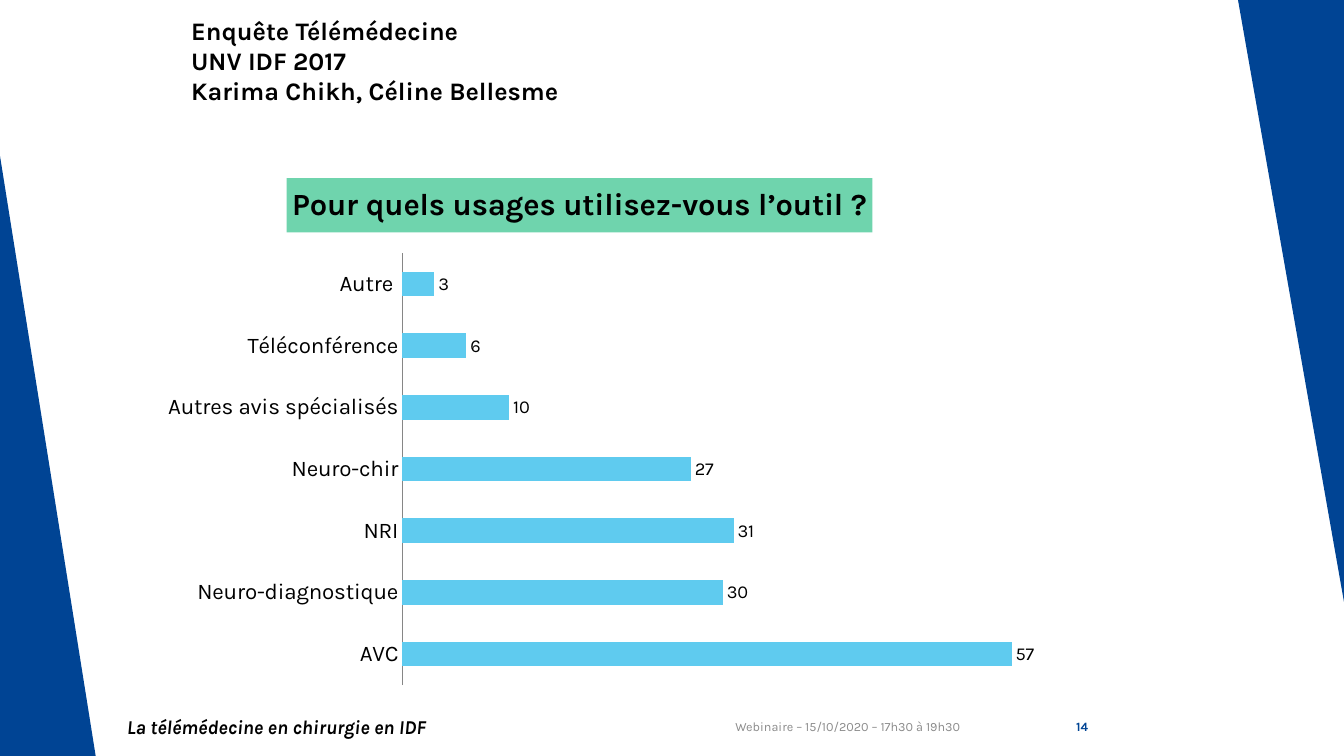
from lxml import etree
from pptx import Presentation, util as u
from pptx.chart.data import CategoryChartData
from pptx.dml.color import RGBColor
from pptx.enum import chart as charts, shapes, text
from pptx.oxml.ns import qn

COLORS = {"blue": "004494", "sky": "5FCBEF", "green": "6FD4AD",
          "black": "000000", "grey": "8C8C8C", "axis": "868686"}
USAGES = {"AVC": 57, "Neuro-diagnostique": 30, "NRI": 31, "Neuro-chir": 27,
          "Autres avis spécialisés": 10, "Téléconférence": 6, "Autre ": 3}


def px(length):
    return u.Inches(length / 100.8)


def color(name):
    return RGBColor.from_string(COLORS[name])


class SurveySlide:
    """Holds the deck style and the current slide, and draws its elements."""

    font_name = "Karla"

    def __init__(self):
        self.presentation = Presentation()
        self.presentation.slide_width = px(1344)
        self.presentation.slide_height = px(756)
        self.slide = self.presentation.slides.add_slide(self.presentation.slide_layouts[5])

    def style(self, font, size, shade="black", bold=False, italic=False):
        font.name = self.font_name
        font.size = u.Pt(size)
        font.bold = bold
        font.italic = italic
        font.color.rgb = color(shade)

    def fill_text(self, shape, lines, size, anchor, align, **look):
        frame = shape.text_frame
        frame.word_wrap = True
        frame.auto_size = text.MSO_AUTO_SIZE.NONE
        frame.vertical_anchor = anchor
        frame.text = "\n".join(lines)
        for paragraph in frame.paragraphs:
            paragraph.alignment = align
            self.style(paragraph.font, size, **look)

    def title(self, box, lines):
        shape = self.slide.shapes.title
        shape.left, shape.top, shape.width, shape.height = map(px, box)
        self.fill_text(shape, lines, 18, text.MSO_ANCHOR.TOP, text.PP_ALIGN.LEFT, bold=True)

    def label(self, box, line, size, align=text.PP_ALIGN.LEFT, **look):
        shape = self.slide.shapes.add_textbox(*map(px, box))
        self.fill_text(shape, [line], size, text.MSO_ANCHOR.MIDDLE, align, **look)

    def corner(self, box, rotation=0):
        shape = self.slide.shapes.add_shape(shapes.MSO_SHAPE.RIGHT_TRIANGLE, *map(px, box))
        shape.rotation = rotation
        shape.shadow.inherit = False
        shape.fill.solid()
        shape.fill.fore_color.rgb = color("blue")
        shape.line.fill.background()

    def place(self, element, index, **settings):
        for old in element.findall(qn("c:layout")):
            element.remove(old)
        layout = etree.Element(qn("c:layout"))
        manual = etree.SubElement(layout, qn("c:manualLayout"))
        for tag, value in settings.items():
            etree.SubElement(manual, qn(f"c:{tag}")).set("val", str(value))
        element.insert(index, layout)

    def bar_chart(self, box, heading, values):
        data = CategoryChartData()
        data.categories = list(values)
        data.add_series("Series 1", list(values.values()))
        chart = self.slide.shapes.add_chart(
            charts.XL_CHART_TYPE.BAR_CLUSTERED, *map(px, box), data).chart
        self.style(chart.font, 13)
        chart.has_legend = False

        chart.has_title = True
        title = chart.chart_title
        title.text_frame.text = heading
        self.style(title.text_frame.paragraphs[0].font, 22, bold=True)
        title.include_in_layout = False
        title.format.fill.solid()
        title.format.fill.fore_color.rgb = color("green")
        self.place(title.element, 1, xMode="edge", yMode="edge", x=0.15, y=0.01)
        self.place(chart.element.find(".//" + qn("c:plotArea")), 0, layoutTarget="inner",
                   xMode="edge", yMode="edge", x=0.277, y=0.154, w=0.704, h=0.829)

        plot = chart.plots[0]
        plot.gap_width = 150
        plot.overlap = -25
        plot.vary_by_categories = False
        series = plot.series[0]
        series.format.fill.solid()
        series.format.fill.fore_color.rgb = color("sky")
        plot.has_data_labels = True
        plot.data_labels.show_value = True
        plot.data_labels.position = charts.XL_LABEL_POSITION.OUTSIDE_END
        self.style(plot.data_labels.font, 13)

        axis = chart.category_axis
        axis.major_tick_mark = charts.XL_TICK_MARK.NONE
        axis.format.line.color.rgb = color("axis")
        axis.format.line.width = u.Pt(1)
        self.style(axis.tick_labels.font, 16)
        scale = chart.value_axis
        scale.minimum_scale, scale.maximum_scale = 0, 60
        scale.has_major_gridlines = False
        scale.visible = False


def main():
    survey = SurveySlide()
    survey.corner((0, 156, 96, 602))
    survey.corner((1238, 0, 106, 602), rotation=180)
    survey.label((708, 707, 262, 40), "Webinaire – 15/10/2020 – 17h30 à 19h30", 9,
                 text.PP_ALIGN.RIGHT, shade="grey")
    survey.label((117, 707, 539, 40), "La télémédecine en chirurgie en IDF", 14,
                 bold=True, italic=True)
    survey.label((1022, 707, 76, 40), "14", 9, text.PP_ALIGN.RIGHT, shade="blue", bold=True)
    survey.bar_chart((150, 173, 911, 521), "Pour quels usages utilisez-vous l’outil ?", USAGES)
    survey.title((181, 10, 548, 102),
                 ["Enquête Télémédecine", "UNV IDF 2017", "Karima Chikh, Céline Bellesme"])
    survey.presentation.save("out.pptx")


if __name__ == "__main__":
    main()
